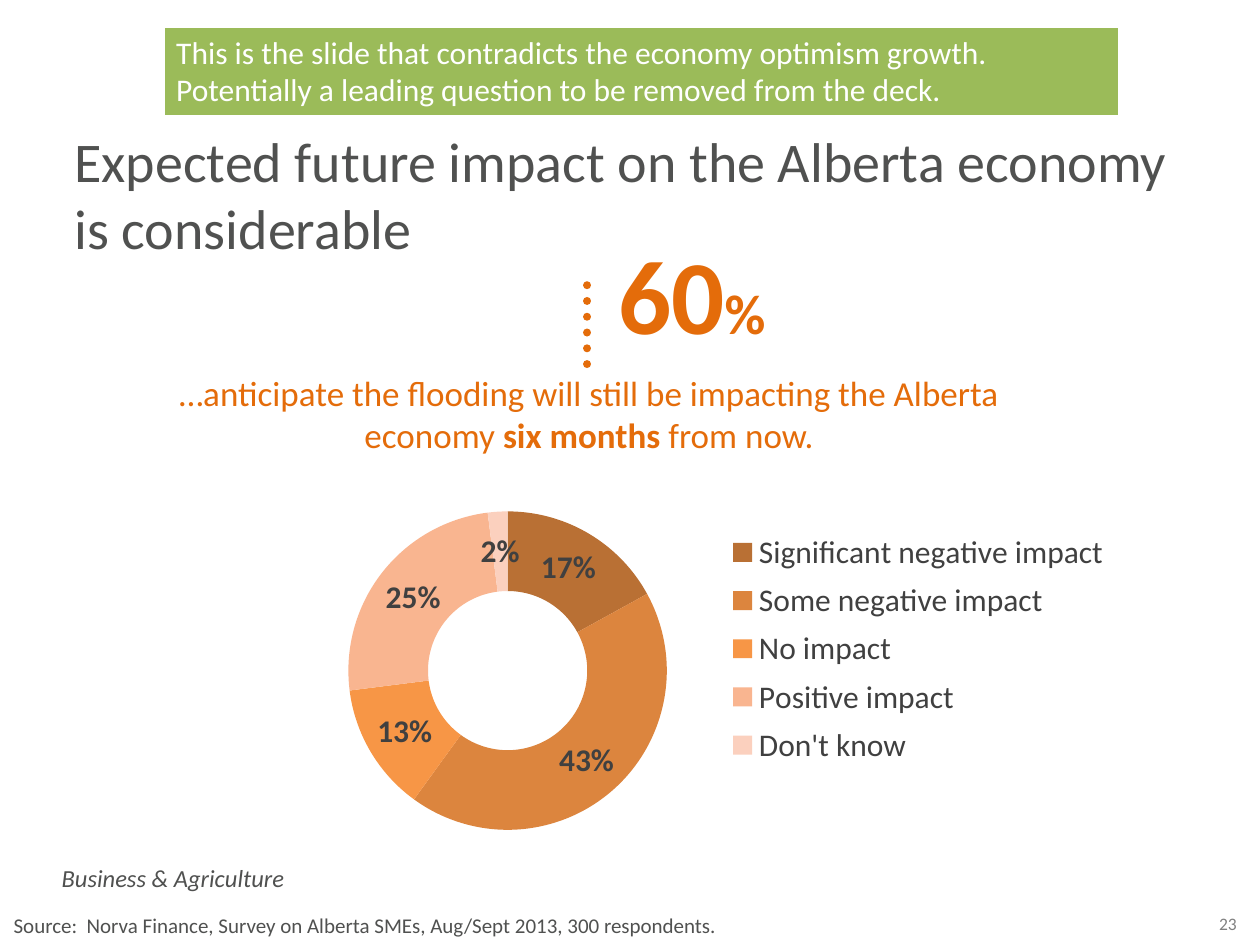
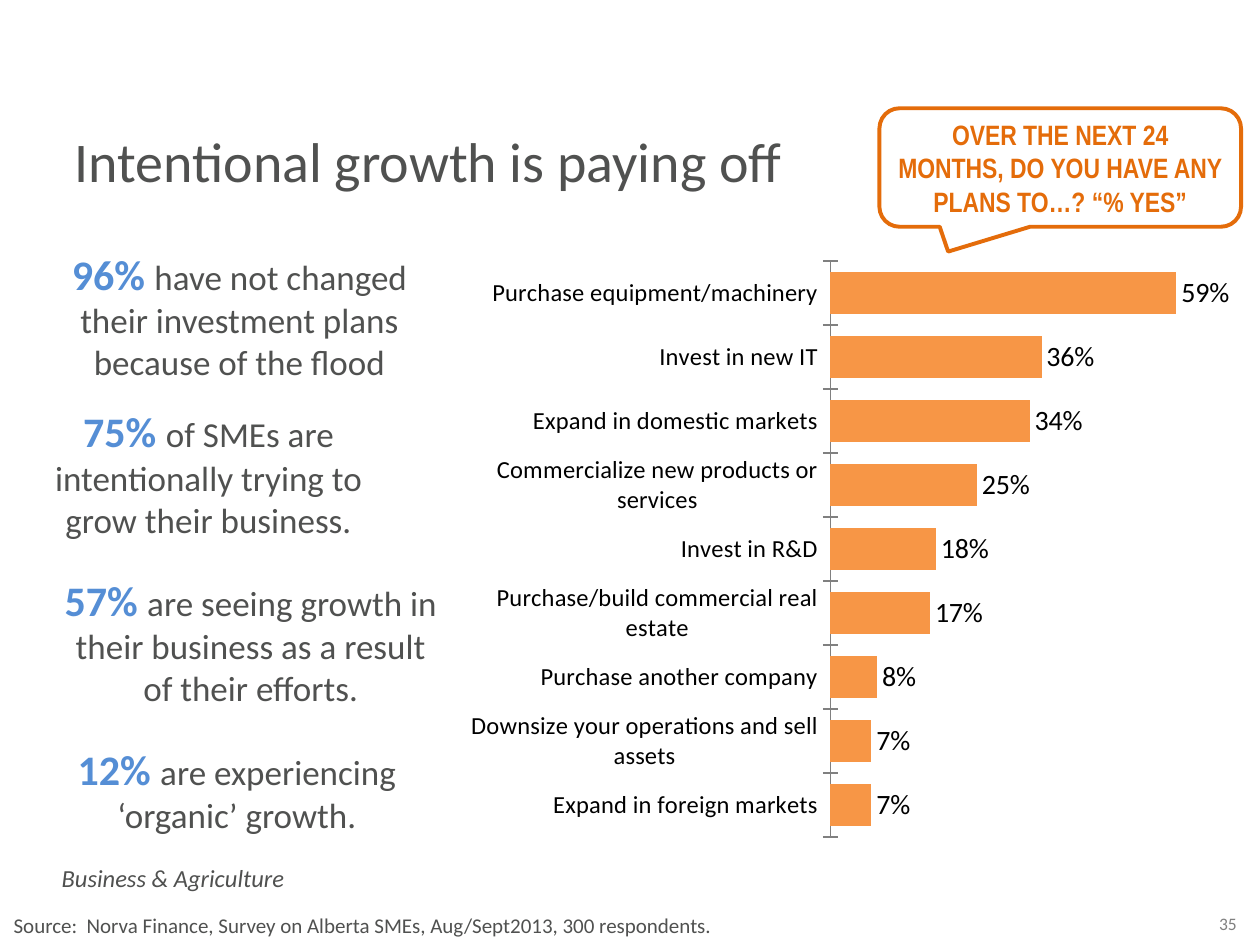
from dataclasses import dataclass, field
from typing import Any

import lxml.etree
import pptx
import pptx.chart.chart
import pptx.chart.data
import pptx.dml.color
import pptx.enum.chart
import pptx.enum.dml
import pptx.enum.shapes
import pptx.enum.text
import pptx.oxml.ns
import pptx.shapes.autoshape
import pptx.slide
import pptx.util

Inches = pptx.util.Inches
Pt = pptx.util.Pt
Align = pptx.enum.text.PP_ALIGN
Anchor = pptx.enum.text.MSO_ANCHOR
Kind = pptx.enum.chart.XL_CHART_TYPE
Form = pptx.enum.shapes.MSO_SHAPE

# Shared look
HUES = {
    "text": "505150", "orange": "E46C0A", "blue": "558ED5", "green": "9BBB59",
    "white": "FFFFFF", "black": "000000", "grey": "808080", "dark": "404040",
    "bar": "F79646",
}
RING = ["B97034", "DC853E", "F79646", "F9B590", "FBD0BE"]
FACE = "Calibri"

Box = tuple[float, float, float, float]


@dataclass
class Run:
    text: str
    size: float
    hue: str = "text"
    form: dict[str, Any] = field(default_factory=dict)


@dataclass
class Label:
    box: Box
    runs: list[Run]
    form: dict[str, Any] = field(default_factory=dict)
    align: Any = Align.CENTER


def rgb(code: str) -> pptx.dml.color.RGBColor:
    return pptx.dml.color.RGBColor.from_string(code)


def spans(box: Box) -> list[pptx.util.Length]:
    return [Inches(side) for side in box]


def style(font: Any, size: float, hue: str, **form: Any) -> None:
    values = {"name": FACE, "size": Pt(size), "bold": False, **form}
    for key, value in values.items():
        setattr(font, key, value)
    font.color.rgb = rgb(HUES[hue])


def write(shape: Any, label: Label) -> None:
    frame = shape.text_frame
    values = {
        "word_wrap": True,
        "auto_size": pptx.enum.text.MSO_AUTO_SIZE.NONE,
        "vertical_anchor": Anchor.TOP,
        **label.form,
    }
    for key, value in values.items():
        setattr(frame, key, value)
    para = frame.paragraphs[0]
    para.alignment = label.align
    for item in label.runs:
        run = para.add_run()
        run.text = item.text
        style(run.font, item.size, item.hue, **item.form)


def add_text(slide: pptx.slide.Slide, label: Label) -> None:
    write(slide.shapes.add_textbox(*spans(label.box)), label)


def add_form(slide: pptx.slide.Slide, kind: Any, label: Label, fill: str,
             edge: str, width: float) -> pptx.shapes.autoshape.Shape:
    shape = slide.shapes.add_shape(kind, *spans(label.box))
    shape.shadow.inherit = False
    if fill:
        shape.fill.solid()
        shape.fill.fore_color.rgb = rgb(HUES[fill])
    else:
        shape.fill.background()
    shape.line.color.rgb = rgb(HUES[edge])
    shape.line.width = Pt(width)
    write(shape, label)
    return shape


def add_page(deck: Any, title: str, box: Box, source: str,
             number: str) -> pptx.slide.Slide:
    """Add a slide with its title, segment note, source and page number."""
    slide = deck.slides.add_slide(deck.slide_layouts[5])
    head = slide.shapes.title
    for key, value in zip(("left", "top", "width", "height"), spans(box)):
        setattr(head, key, value)
    write(head, Label(box, [Run(title, 32)], align=Align.LEFT))
    note = Run("Business & Agriculture", 14, form={"italic": True})
    add_text(slide, Label((0.39, 6.8, 2.81, 0.34), [note], align=Align.LEFT))
    add_text(slide, Label((0.01, 7.19, 7.07, 0.3), [Run(source, 12)], align=Align.LEFT))
    add_text(slide, Label((9.5, 7.2, 0.49, 0.27), [Run(number, 10, "grey")]))
    return slide


def layout(box: Box, inner: bool = False) -> Any:
    """Make a manual chart layout from fractions of the chart area."""
    tag = pptx.oxml.ns.qn
    root = lxml.etree.Element(tag("c:layout"))
    hand = lxml.etree.SubElement(root, tag("c:manualLayout"))
    parts = {"layoutTarget": "inner"} if inner else {}
    parts |= {"xMode": "edge", "yMode": "edge"}
    parts |= {key: str(value) for key, value in zip("xywh", box)}
    for key, value in parts.items():
        lxml.etree.SubElement(hand, tag(f"c:{key}")).set("val", value)
    return root


def add_chart(slide: pptx.slide.Slide, kind: Any, box: Box, plot: Box,
              rows: dict[str, float]) -> pptx.chart.chart.Chart:
    data = pptx.chart.data.CategoryChartData(number_format="0%")
    data.categories = list(rows)
    data.add_series("Series 1", list(rows.values()))
    chart = slide.shapes.add_chart(kind, *spans(box), data).chart
    chart.has_title = False
    chart.has_legend = False
    style(chart.font, 18, "black")
    area = chart.element.xpath("c:chart/c:plotArea")[0]
    for old in area.xpath("c:layout"):
        area.remove(old)
    area.insert(0, layout(plot, inner=True))
    chart.plots[0].has_data_labels = True
    marks = chart.plots[0].data_labels
    values = {"show_value": True, "show_percentage": False,
              "number_format": "0%", "number_format_is_linked": False}
    for key, value in values.items():
        setattr(marks, key, value)
    return chart


def flood(deck: Any) -> None:
    slide = add_page(
        deck, "Expected future impact on the Alberta economy is considerable",
        (0.49, 0.95, 9.25, 1.18),
        "Source:  Norva Finance, Survey on Alberta SMEs, Aug/Sept 2013, 300 respondents.",
        "23")

    # Key figure
    bold = {"bold": True}
    add_text(slide, Label((1.3, 2.9, 6.75, 0.77), [
        Run("…anticipate the flooding will still be impacting the Alberta economy ",
            20, "orange"),
        Run("six months", 20, "orange", bold),
        Run(" from now.", 20, "orange"),
    ]))
    add_text(slide, Label(
        (4.78, 1.77, 1.42, 1.11),
        [Run("60", 60, "orange", bold), Run("%", 32, "orange", bold)],
        {"vertical_anchor": Anchor.MIDDLE}))

    # Dotted rule
    rule = slide.shapes.add_connector(
        pptx.enum.shapes.MSO_CONNECTOR.STRAIGHT,
        *spans((4.66, 2.89, 4.66, 2.14)))
    rule.line.color.rgb = rgb(HUES["orange"])
    rule.line.width = Pt(4.5)
    rule.line.dash_style = pptx.enum.dml.MSO_LINE.ROUND_DOT
    props = rule.element.spPr
    props.xpath("a:ln")[0].set("cap", "rnd")
    lxml.etree.SubElement(props, pptx.oxml.ns.qn("a:effectLst"))

    # Impact ring
    chart = add_chart(
        slide, Kind.DOUGHNUT, (1.3, 3.68, 7.58, 3.16), (0.09, 0.12, 0.54, 0.8),
        {"Significant negative impact": 0.17, "Some negative impact": 0.43,
         "No impact": 0.13, "Positive impact": 0.25, "Don't know": 0.02})
    ring = chart.plots[0]
    style(ring.data_labels.font, 18, "dark", bold=True)
    for spot, hue in enumerate(RING):
        fill = ring.series[0].points[spot].format.fill
        fill.solid()
        fill.fore_color.rgb = rgb(hue)
    chart.has_legend = True
    chart.legend.position = pptx.enum.chart.XL_LEGEND_POSITION.RIGHT
    chart.legend.include_in_layout = False
    style(chart.legend.font, 18, "dark")
    place = chart.element.xpath("c:chart/c:legend/c:legendPos")[0]
    for old in place.getparent().xpath("c:layout"):
        place.getparent().remove(old)
    place.addnext(layout((0.59, 0.15, 0.4, 0.63)))

    # Review banner
    add_form(slide, Form.RECTANGLE, Label((1.3, 0.21, 7.58, 0.71), [Run(
        "This is the slide that contradicts the economy optimism growth. "
        "Potentially a leading question to be removed from the deck.",
        18, "white")], align=Align.LEFT), "green", "white", 1.5)


def growth(deck: Any) -> None:
    slide = add_page(
        deck, "Intentional growth is paying off", (0.49, 0.95, 8.83, 0.64),
        "Source:  Norva Finance, Survey on Alberta SMEs, Aug/Sept2013, 300 respondents.",
        "35")

    # Key findings
    facts: list[tuple[Box, str, str]] = [
        ((0.29, 1.92, 3.22, 1.18), "96% ",
         "have not changed their investment plans because of the flood"),
        ((0.06, 3.17, 3.19, 1.18), "75% ",
         "of SMEs are intentionally trying to grow their business."),
        ((0.38, 4.51, 3.22, 1.18), "57% ",
         "are seeing growth in their business as a result of their efforts."),
        ((0.41, 5.85, 2.94, 0.84), "12% ",
         "are experiencing ‘organic’ growth."),
    ]
    for box, share, fact in facts:
        add_text(slide, Label(
            box, [Run(share, 24, "blue", {"bold": True}), Run(fact, 20)]))

    # Plans by share, lowest first
    chart = add_chart(
        slide, Kind.BAR_CLUSTERED, (3.63, 1.92, 6.22, 4.88),
        (0.476, 0.031, 0.524, 0.937),
        {"Expand in foreign markets": 0.07,
         "Downsize your operations and sell assets": 0.07,
         "Purchase another company": 0.08,
         "Purchase/build commercial real estate": 0.17,
         "Invest in R&D": 0.18,
         "Commercialize new products or services": 0.25,
         "Expand in domestic markets": 0.34,
         "Invest in new IT": 0.36,
         "Purchase equipment/machinery": 0.59})
    bars = chart.plots[0]
    bars.gap_width = 50
    bars.vary_by_categories = False
    fill = bars.series[0].format.fill
    fill.solid()
    fill.fore_color.rgb = rgb(HUES["bar"])
    style(bars.data_labels.font, 16, "black")
    bars.data_labels.position = pptx.enum.chart.XL_LABEL_POSITION.OUTSIDE_END
    scale = {"minimum_scale": 0, "maximum_scale": 0.7, "visible": False,
             "has_major_gridlines": False}
    for key, value in scale.items():
        setattr(chart.value_axis, key, value)
    names = chart.category_axis
    names.major_tick_mark = pptx.enum.chart.XL_TICK_MARK.CROSS
    names.format.line.color.rgb = rgb(HUES["grey"])
    style(names.tick_labels.font, 14, "black")

    # Survey question
    ask = Run("OVER THE NEXT 24 MONTHS, DO YOU HAVE ANY PLANS TO…? “% YES”",
              16, "orange", {"name": "Arial Narrow", "bold": True})
    label = Label((6.98, 0.86, 2.87, 0.94), [ask], {"vertical_anchor": Anchor.MIDDLE})
    bubble = add_form(slide, Form.ROUNDED_RECTANGULAR_CALLOUT, label, "",
                      "orange", 2.25)
    for spot, value in enumerate((-0.31, 0.71, 0.17)):
        bubble.adjustments[spot] = value


def main() -> None:
    deck = pptx.Presentation()
    deck.slide_width, deck.slide_height = Inches(10), Inches(7.5)
    flood(deck)
    growth(deck)
    deck.save("out.pptx")


if __name__ == "__main__":
    main()
